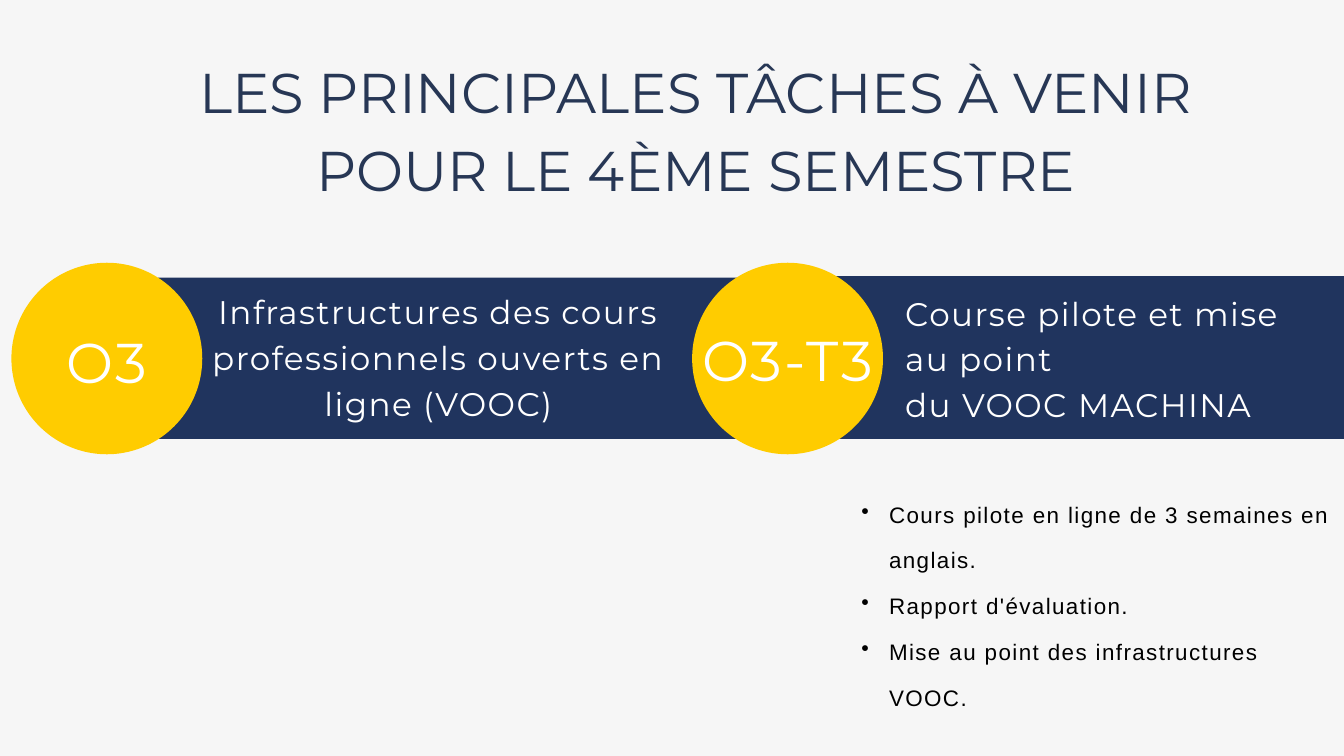
import pptx
import pptx.dml.color
import pptx.enum.shapes
import pptx.enum.text
import pptx.oxml
import pptx.util
from dataclasses import dataclass

Inches = pptx.util.Inches
Pt = pptx.util.Pt
Align = pptx.enum.text.PP_ALIGN
Shapes = pptx.enum.shapes.MSO_SHAPE


@dataclass(frozen=True)
class Theme:
    background: str = "F6F6F6"
    navy: str = "20345E"
    yellow: str = "FFCC00"
    title: str = "273755"
    white: str = "FFFFFF"
    black: str = "000000"
    heading_font: str = "Montserrat"
    body_font: str = "Arial"
    large: int = 60
    medium: int = 35
    small: int = 24
    large_line: int = 84
    text_line: int = 49


THEME = Theme()


def color(value):
    return pptx.dml.color.RGBColor.from_string(value)


def add_filled_shape(slide, kind, left, top, width, height, fill):
    shape = slide.shapes.add_shape(
        kind, Inches(left), Inches(top), Inches(width), Inches(height))
    shape.shadow.inherit = False
    shape.fill.solid()
    shape.fill.fore_color.rgb = color(fill)
    shape.line.fill.background()


def add_bullet(paragraph):
    properties = paragraph._p.get_or_add_pPr()
    properties.set("marL", str(Inches(0.83)))
    properties.set("indent", str(Inches(-0.41)))
    bullet = pptx.oxml.parse_xml(
        '<a:buChar xmlns:a="http://schemas.openxmlformats.org/drawingml/2006/main"'
        ' char="•"/>')
    properties.append(bullet)


def add_text(slide, box, lines, size, line_height, text_color=THEME.white,
             font=THEME.heading_font, align=Align.CENTER, tracking=0,
             bulleted=False):
    shape = slide.shapes.add_textbox(*(Inches(length) for length in box))
    frame = shape.text_frame
    frame.margin_left = frame.margin_right = 0
    frame.margin_top = frame.margin_bottom = 0
    frame.word_wrap = True
    frame.text = "\n".join(lines)
    for paragraph in frame.paragraphs:
        if bulleted:
            paragraph.level = 1
            add_bullet(paragraph)
        paragraph.alignment = align
        paragraph.line_spacing = Pt(line_height)
        for run in paragraph.runs:
            run.font.name = font
            run.font.size = Pt(size)
            run.font.color.rgb = color(text_color)
            if tracking:
                # Letter spacing is stored in hundredths of a point
                run.font._element.set("spc", str(int(tracking * 100)))


def add_circle_label(slide, center, top, height, label):
    width = 8.21
    add_text(slide, (center - width / 2, top, width, height), [label],
             THEME.large, THEME.large_line, tracking=2.5)


def main():
    presentation = pptx.Presentation()
    presentation.slide_width = Inches(20)
    presentation.slide_height = Inches(11.25)
    slide = presentation.slides.add_slide(presentation.slide_layouts[6])
    slide.background.fill.solid()
    slide.background.fill.fore_color.rgb = color(THEME.background)

    # Bands, then the circles that overlap them
    output_center, task_center = 1.59, 11.72
    add_filled_shape(slide, Shapes.RECTANGLE, task_center, 4.11, 8.28, 2.42,
                     THEME.navy)
    add_filled_shape(slide, Shapes.RECTANGLE, 2.35, 4.13, 8.8, 2.4, THEME.navy)
    diameter = 2.84
    for center in (task_center, output_center):
        add_filled_shape(slide, Shapes.OVAL, center - diameter / 2, 3.91,
                         diameter, 2.85, THEME.yellow)

    # Band and circle texts
    add_text(slide, (2.67, 4.25, 7.71, 2.02),
             ["Infrastructures des cours professionnels ouverts en ligne (VOOC)"],
             THEME.medium, THEME.text_line, tracking=1.5)
    add_circle_label(slide, output_center, 4.71, 1.11, "O3")
    add_circle_label(slide, task_center, 4.67, 1.14, "O3-T3")
    add_text(slide, (13.47, 4.27, 6.21, 1.99),
             ["Course pilote et mise au point", "du VOOC MACHINA"],
             THEME.medium, THEME.text_line, align=Align.LEFT, tracking=1.5)

    # Task list
    add_text(slide, (12.4, 7.17, 7.44, 3.34),
             ["Cours pilote en ligne de 3 semaines en anglais.",
              "Rapport d'évaluation.",
              "Mise au point des infrastructures VOOC."],
             THEME.small, THEME.text_line, THEME.black, THEME.body_font,
             Align.LEFT, tracking=1.5, bulleted=True)

    # Title
    add_text(slide, (1.82, 0.69, 17.06, 2.28),
             ["LES PRINCIPALES TÂCHES À VENIR POUR LE 4ÈME SEMESTRE"],
             THEME.large, THEME.large_line, THEME.title)

    presentation.save("out.pptx")


if __name__ == "__main__":
    main()
